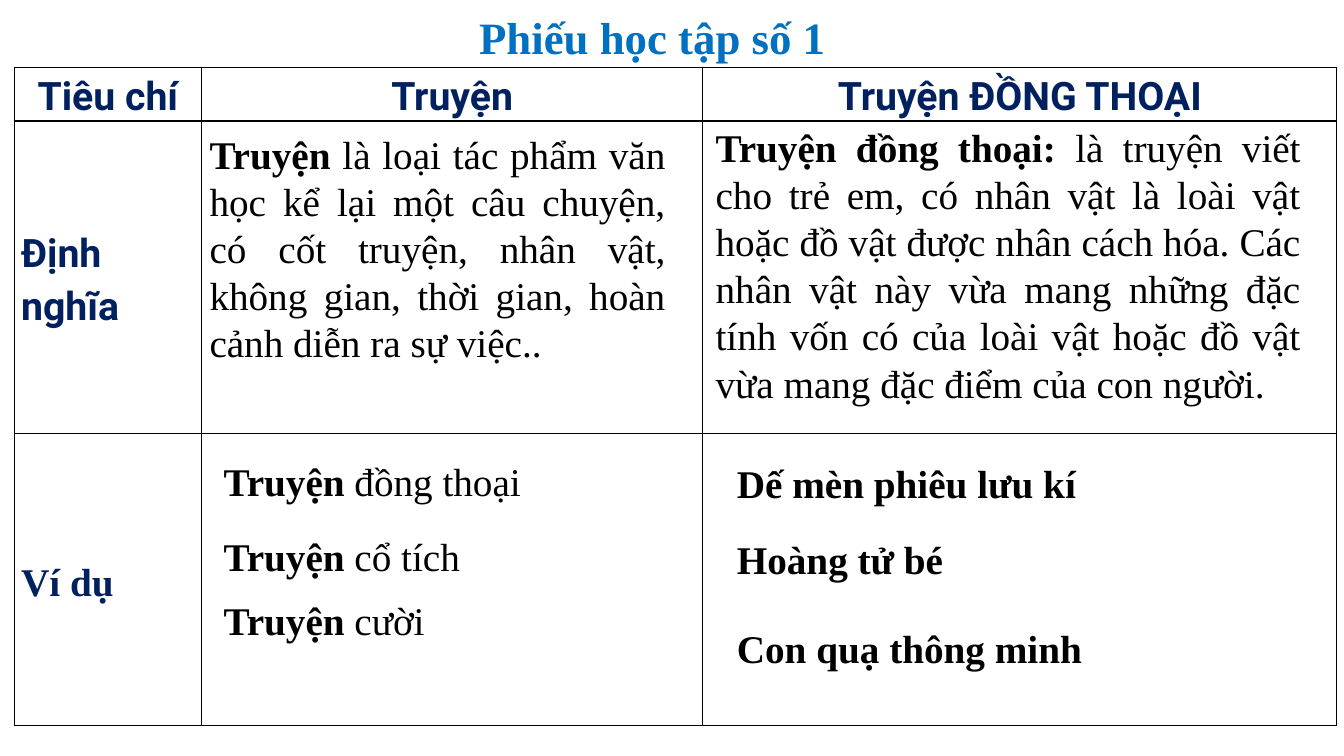
from dataclasses import dataclass
from lxml.etree import SubElement as Sub
from pptx import Presentation
from pptx.dml.color import RGBColor as Rgb
from pptx.enum.text import MSO_ANCHOR as Anchor, MSO_AUTO_SIZE as Fit, PP_ALIGN as Align
from pptx.oxml.ns import qn
from pptx.util import Inches, Pt


@dataclass(frozen=True)
class Theme:
    navy: str = "002060"
    blue: str = "0070C0"
    black: str = "000000"
    head: str = "Roboto"
    body: str = "Times New Roman"
    large: int = 32
    size: int = 28
    line: float = 1


@dataclass(frozen=True)
class Area:
    col: float
    row: float
    wide: float
    high: float


@dataclass(frozen=True)
class Note:
    area: Area
    bold: str
    plain: str = ""


@dataclass(frozen=True)
class Label:
    row: int
    col: int
    text: str
    font: str
    align: Align = Align.LEFT


THEME = Theme()
WIDE, HIGH = 13.33, 7.5
GRID = 100
TABLE = Area(1.05, 8.93, 98.42, 87.07)
COLS = (13.95, 37.28, 47.19)
ROWS = (7.07, 41.33, 38.67)
TITLE = Area(32.41, 0.53, 32.26, 8.53)

HEADS = ("Tiêu chí", "Truyện", "Truyện ĐỒNG THOẠI")
LABELS = [Label(0, i, text, THEME.head, Align.CENTER) for i, text in enumerate(HEADS)] + [
    Label(1, 0, "Định nghĩa", THEME.head),
    Label(2, 0, "Ví dụ", THEME.body),
]


def item(col: float, row: float, bold: str, plain: str = "") -> Note:
    return Note(Area(col, row, 35.41, 7.6), bold, plain)


NOTES = [
    Note(
        Area(14.85, 16.4, 35.41, 32.8),
        "Truyện ",
        "là loại tác phẩm văn học kể lại một câu chuyện, có cốt truyện, nhân vật, "
        "không gian, thời gian, hoàn cảnh diễn ra sự việc..",
    ),
    Note(
        Area(52.51, 15.47, 45.01, 39.07),
        "Truyện đồng thoại: ",
        "là truyện viết cho trẻ em, có nhân vật là loài vật hoặc đồ vật được nhân cách hóa. "
        "Các nhân vật này vừa mang những đặc tính vốn có của loài vật hoặc đồ vật "
        "vừa mang đặc điểm của con người.",
    ),
    item(15.9, 59.87, "Truyện ", "đồng thoại"),
    item(15.9, 69.73, "Truyện ", "cổ tích"),
    item(15.9, 78.13, "Truyện ", "cười"),
    item(54.09, 60.13, "Dế mèn phiêu lưu kí"),
    item(54.09, 70.13, "Hoàng tử bé"),
    item(54.09, 81.87, "Con quạ thông minh"),
]


def across(cols: float) -> int:
    return Inches(cols * WIDE / GRID)


def down(rows: float) -> int:
    return Inches(rows * HIGH / GRID)


def place(area: Area) -> tuple[int, int, int, int]:
    return across(area.col), down(area.row), across(area.wide), down(area.high)


def write(frame, bold: str, plain: str = "", *, font: str = THEME.body,
          size: int = THEME.size, color: str = THEME.black,
          align: Align = Align.JUSTIFY, space: float | None = None) -> None:
    para = frame.paragraphs[0]
    para.alignment = align
    if space:
        para.line_spacing = space
    for text, heavy in ((bold, True), (plain, False)):
        if text:
            run = para.add_run()
            run.text = text
            run.font.name = font
            run.font.size = Pt(size)
            run.font.bold = heavy
            run.font.color.rgb = Rgb.from_string(color)


def add_box(slide, area: Area):
    frame = slide.shapes.add_textbox(*place(area)).text_frame
    frame.word_wrap = True
    frame.auto_size = Fit.SHAPE_TO_FIT_TEXT
    frame.vertical_anchor = Anchor.MIDDLE
    return frame


def style(cell) -> None:
    cell.vertical_anchor = Anchor.MIDDLE
    cell.margin_left = cell.margin_right = Inches(0.07)
    cell.margin_top = cell.margin_bottom = 0
    props = cell._tc.get_or_add_tcPr()
    for side in ("lnL", "lnR", "lnT", "lnB"):
        line = Sub(props, qn(f"a:{side}"), w=str(Pt(THEME.line)))
        fill = Sub(line, qn("a:solidFill"))
        Sub(fill, qn("a:srgbClr"), val=THEME.black)
    cell.fill.background()


def add_grid(slide) -> None:
    table = slide.shapes.add_table(len(ROWS), len(COLS), *place(TABLE)).table
    table.first_row = table.horz_banding = False
    for col, wide in zip(table.columns, COLS):
        col.width = across(wide)
    for row, high in zip(table.rows, ROWS):
        row.height = down(high)
    for cell in table.iter_cells():
        style(cell)
    for label in LABELS:
        write(table.cell(label.row, label.col).text_frame, label.text,
              font=label.font, color=THEME.navy, align=label.align, space=1.15)


def main() -> None:
    deck = Presentation()
    deck.slide_width, deck.slide_height = Inches(WIDE), Inches(HIGH)
    slide = deck.slides.add_slide(deck.slide_layouts[6])
    add_grid(slide)
    write(add_box(slide, TITLE), "Phiếu học tập số 1",
          size=THEME.large, color=THEME.blue, align=Align.CENTER)
    for note in NOTES:
        write(add_box(slide, note.area), note.bold, note.plain)
    deck.save("out.pptx")


if __name__ == "__main__":
    main()
